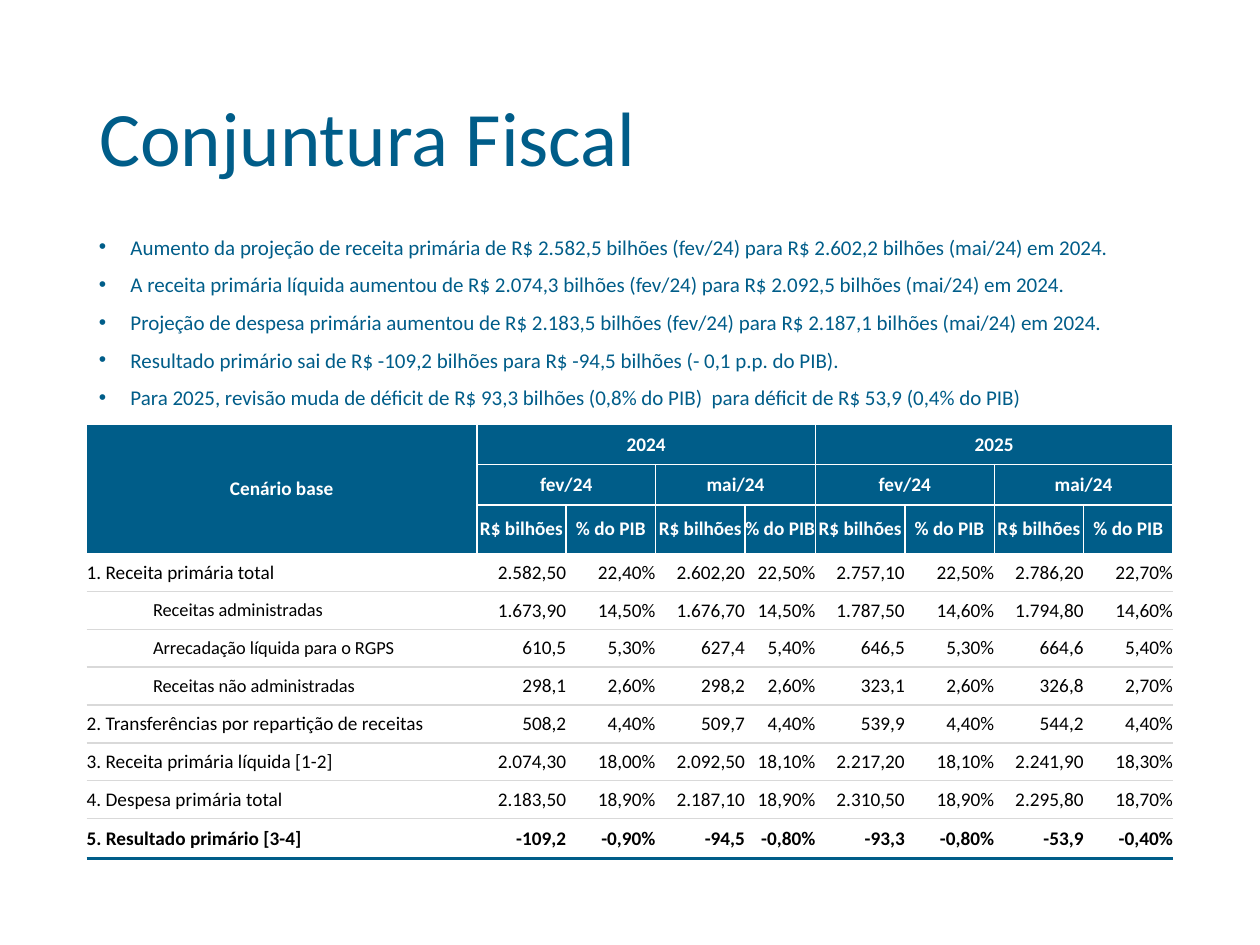
from lxml import etree
from pptx import Presentation
from pptx.dml.color import RGBColor
from pptx.enum import text
from pptx.oxml import ns
from pptx.util import Pt

BLUE = RGBColor(0x00, 0x5D, 0x89)
WHITE = RGBColor(0xFF, 0xFF, 0xFF)
BLACK = RGBColor(0x00, 0x00, 0x00)
GRAY = RGBColor(0xD9, 0xD9, 0xD9)
LEFT, CENTER, RIGHT = text.PP_ALIGN.LEFT, text.PP_ALIGN.CENTER, text.PP_ALIGN.RIGHT
MIDDLE = text.MSO_ANCHOR.MIDDLE


def write(frame, *lines, size=11, color=BLACK, bold=False, align=LEFT,
          lead=None, gap=0, bullet=None, left=0, hang=0):
    """Fill a text frame with one formatted paragraph per line."""
    for i, line in enumerate(lines):
        para = frame.paragraphs[0] if i == 0 else frame.add_paragraph()
        para.alignment = align
        if lead:
            para.line_spacing = lead
        if gap and i:
            para.space_before = Pt(gap)
        props = para._p.get_or_add_pPr()
        if left:
            props.set("marL", str(Pt(left)))
            props.set("indent", str(Pt(-hang)))
        if bullet:
            etree.SubElement(props, ns.qn("a:buFont"), typeface="Arial")
            etree.SubElement(props, ns.qn("a:buChar"), char=bullet)
        run = para.add_run()
        run.text = line
        font = run.font
        font.name, font.size, font.bold = "Calibri", Pt(size), bold
        font.color.rgb = color


def border(cell, **sides):
    """Draw the sides given as L, R, T or B=(colour, width); clear the rest."""
    props = cell._tc.get_or_add_tcPr()
    for side in "LRTB":
        color, width = sides.get(side, (None, 0))
        line = etree.SubElement(props, ns.qn("a:ln" + side), w=str(Pt(width)))
        if color is None:
            etree.SubElement(line, ns.qn("a:noFill"))
        else:
            fill = etree.SubElement(line, ns.qn("a:solidFill"))
            etree.SubElement(fill, ns.qn("a:srgbClr"), val=str(color))


deck = Presentation()
deck.slide_width, deck.slide_height = Pt(720), Pt(540)
slide = deck.slides.add_slide(deck.slide_layouts[5])

X, WIDTH = 49.5, 621

title = slide.shapes.title
title.left, title.top, title.width, title.height = Pt(X), Pt(29), Pt(WIDTH), Pt(104)
title.text_frame.vertical_anchor = MIDDLE
write(title.text_frame, "Conjuntura Fiscal", size=44, color=BLUE, lead=0.9)

# Key points
body = slide.shapes.add_textbox(Pt(X), Pt(133), Pt(WIDTH), Pt(109.5))
body.text_frame.word_wrap = True
write(
    body.text_frame,
    "Aumento da projeção de receita primária de R$ 2.582,5 bilhões (fev/24) para R$ 2.602,2 bilhões (mai/24) em 2024.",
    "A receita primária líquida aumentou de R$ 2.074,3 bilhões (fev/24) para R$ 2.092,5 bilhões (mai/24) em 2024.",
    "Projeção de despesa primária aumentou de R$ 2.183,5 bilhões (fev/24) para R$ 2.187,1 bilhões (mai/24) em 2024.",
    "Resultado primário sai de R$ -109,2 bilhões para R$ -94,5 bilhões (- 0,1 p.p. do PIB).",
    "Para 2025, revisão muda de déficit de R$ 93,3 bilhões (0,8% do PIB)  para déficit de R$ 53,9 (0,4% do PIB)",
    size=12, color=BLUE, lead=0.8, gap=10, bullet="•", left=18, hang=18)

# Fiscal table
ROWS = [
    ("1. Receita primária total", "2.582,50 22,40% 2.602,20 22,50% 2.757,10 22,50% 2.786,20 22,70%"),
    ("Receitas administradas", "1.673,90 14,50% 1.676,70 14,50% 1.787,50 14,60% 1.794,80 14,60%"),
    ("Arrecadação líquida para o RGPS", "610,5 5,30% 627,4 5,40% 646,5 5,30% 664,6 5,40%"),
    ("Receitas não administradas", "298,1 2,60% 298,2 2,60% 323,1 2,60% 326,8 2,70%"),
    ("2. Transferências por repartição de receitas", "508,2 4,40% 509,7 4,40% 539,9 4,40% 544,2 4,40%"),
    ("3. Receita primária líquida [1-2]", "2.074,30 18,00% 2.092,50 18,10% 2.217,20 18,10% 2.241,90 18,30%"),
    ("4. Despesa primária total", "2.183,50 18,90% 2.187,10 18,90% 2.310,50 18,90% 2.295,80 18,70%"),
    ("5. Resultado primário [3-4]", "-109,2 -0,90% -94,5 -0,80% -93,3 -0,80% -53,9 -0,40%"),
]
HEAD = 3
widths = [223] + [51.1] * 8
widths[4] = 40.3
heights = [23, 23, 28] + [21.6] * 7 + [23]

table = slide.shapes.add_table(len(heights), len(widths), Pt(X), Pt(242.5),
                               Pt(sum(widths)), Pt(sum(heights))).table
table.first_row = table.horz_banding = False
for col, width in zip(table.columns, widths):
    col.width = Pt(width)
for row, height in zip(table.rows, heights):
    row.height = Pt(height)
for r in range(len(heights)):
    for c in range(len(widths)):
        cell = table.cell(r, c)
        cell.margin_left = cell.margin_right = cell.margin_top = cell.margin_bottom = 0
        cell.vertical_anchor = MIDDLE
        if r < HEAD:
            cell.fill.solid()
            cell.fill.fore_color.rgb = BLUE
        else:
            cell.fill.background()

# Heading cells: row, column, rows spanned, columns spanned, label
heads = [(0, 0, HEAD, 1, "Cenário base")]
for level, (span, labels) in enumerate([(4, ("2024", "2025")),
                                        (2, ("fev/24", "mai/24")),
                                        (1, ("R$ bilhões", "% do PIB"))]):
    heads += [(level, 1 + i * span, 1, span, labels[i % 2]) for i in range(8 // span)]
for r, c, down, across, label in heads:
    cell = table.cell(r, c)
    if down * across > 1:
        cell.merge(table.cell(r + down - 1, c + across - 1))
    write(cell.text_frame, label, color=WHITE, bold=True, align=CENTER)
    fill = cell._tc.tcPr[0]
    border(cell, **{side: (WHITE, 1) for side in "LRTB"})
    cell._tc.tcPr.append(fill)

last = len(heights) - 1
for r, (label, values) in enumerate(ROWS, HEAD):
    sub = not label[0].isdigit()
    for c, value in enumerate([label] + values.split()):
        cell = table.cell(r, c)
        if c:
            write(cell.text_frame, value, bold=r == last, align=RIGHT)
        elif sub:
            cell.margin_left = Pt(2)
            write(cell.text_frame, value, size=10.5, left=36)
        else:
            write(cell.text_frame, value, bold=r == last)
        fill = cell._tc.tcPr[0]
        sides = {"B": (BLUE, 1.5) if r == last else (GRAY, 1)}
        if r > HEAD:
            sides["T"] = (GRAY, 1)
        border(cell, **sides)
        cell._tc.tcPr.append(fill)

deck.save("out.pptx")
